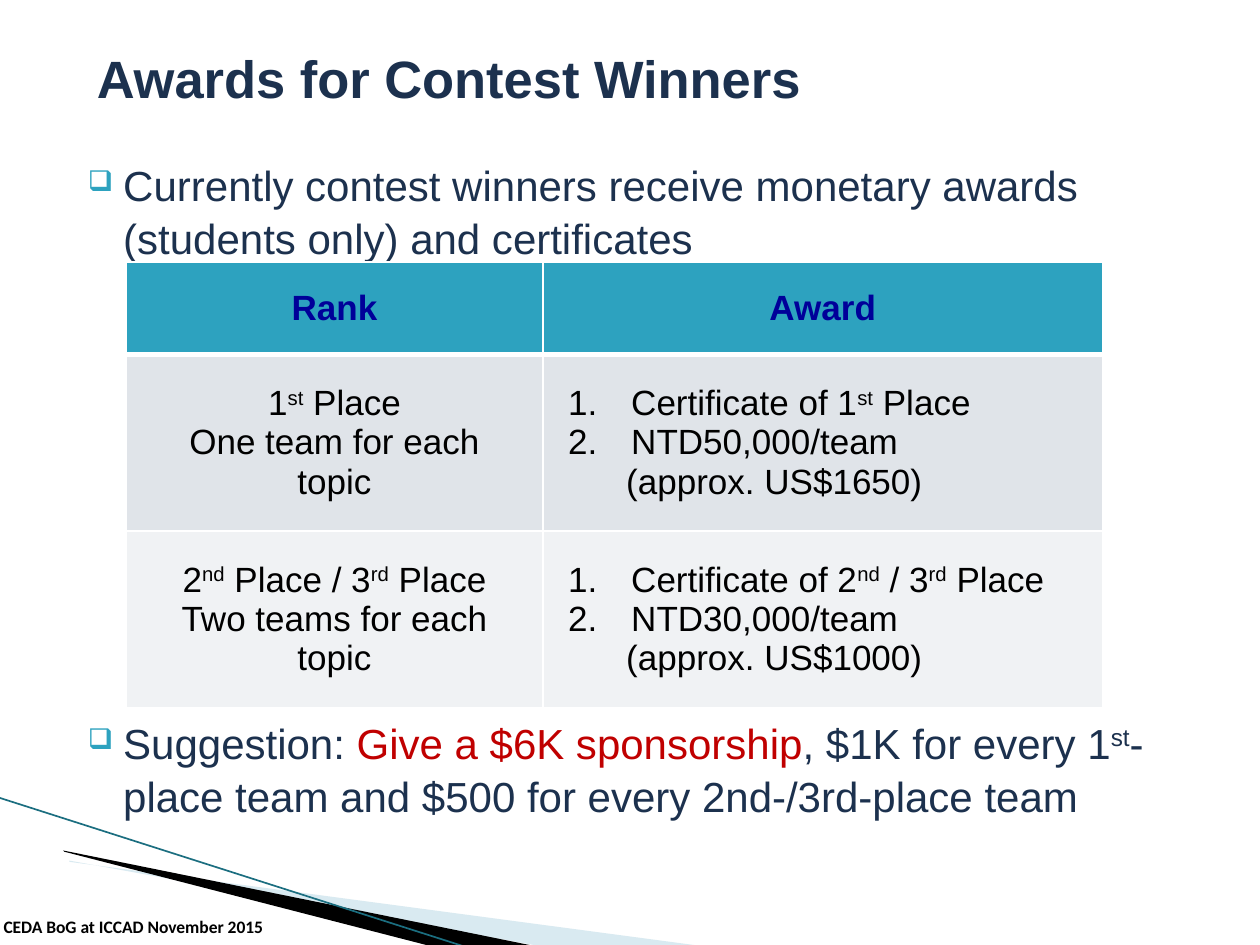
from dataclasses import dataclass

from lxml import etree
from pptx import Presentation
from pptx.dml.color import RGBColor
from pptx.enum.shapes import MSO_CONNECTOR
from pptx.enum.text import MSO_ANCHOR, PP_ALIGN
from pptx.oxml.ns import qn
from pptx.util import Inches, Pt

LEFT, MID = PP_ALIGN.LEFT, PP_ALIGN.CENTER
TOP, CORE, BASE = MSO_ANCHOR.TOP, MSO_ANCHOR.MIDDLE, MSO_ANCHOR.BOTTOM
LINE = MSO_CONNECTOR.STRAIGHT


@dataclass(frozen=True)
class Theme:
    face: str = "Arial"
    small: str = "Calibri"
    navy: str = "1C314E"
    teal: str = "2DA2BF"
    deep: str = "1B6E80"
    pale: str = "A0CBDC"
    blue: str = "000099"
    red: str = "C00000"
    black: str = "000000"
    white: str = "FFFFFF"
    bands: tuple = ("E0E4E9", "F0F2F4")
    title: int = 30
    body: int = 24
    cell: int = 20
    foot: int = 10


THEME = Theme()
ROWS = (
    (("1^st^ Place", "One team for each topic"),
     ("Certificate of 1^st^ Place", "NTD50,000/team", "(approx. US$1650)")),
    (("2^nd^ Place / 3^rd^ Place", "Two teams for each topic"),
     ("Certificate of 2^nd^ / 3^rd^ Place", "NTD30,000/team",
      "(approx. US$1000)")),
)


def rgb(code):
    return RGBColor.from_string(code)


def node(base, tag, **attrs):
    item = etree.SubElement(base, qn(tag))
    for key, val in attrs.items():
        item.set(key, str(val))
    return item


def write(para, text, size=THEME.cell, color=THEME.black, bold=False,
          face=THEME.face, align=LEFT):
    para.alignment = align
    for spot, part in enumerate(text.split("^")):
        if not part:
            continue
        run = para.add_run()
        run.text = part
        font = run.font
        font.size, font.name, font.bold = Pt(size), face, bold
        font.color.rgb = rgb(color)
        if spot % 2:
            run._r.get_or_add_rPr().set("baseline", "30000")


def indent(para, left, hang=0):
    props = para._p.get_or_add_pPr()
    props.set("marL", str(Inches(left)))
    props.set("indent", str(Inches(-hang)))
    return props


def bullet(para):
    props = indent(para, 0.4, 0.28)
    node(node(props, "a:buClr"), "a:srgbClr", val=THEME.teal)
    node(props, "a:buSzPct", val=68000)
    node(props, "a:buChar", char="❑")
    para.line_spacing = 1.06


def number(para):
    props = indent(para, 0.5, 0.5)
    node(props, "a:buFont", typeface=THEME.face)
    node(props, "a:buAutoNum", type="arabicPeriod")


def box(slide, left, top, width, height, anchor):
    shape = slide.shapes.add_textbox(
        Inches(left), Inches(top), Inches(width), Inches(height))
    frame = shape.text_frame
    frame.word_wrap = True
    frame.vertical_anchor = anchor
    return frame


def wedge(slide, points, color, alpha=100):
    spots = [(Inches(x), Inches(y)) for x, y in points]
    build = slide.shapes.build_freeform(*spots[0])
    build.add_line_segments(spots[1:])
    shape = build.convert_to_shape()
    shape.shadow.inherit = False
    shape.line.fill.background()
    shape.fill.solid()
    shape.fill.fore_color.rgb = rgb(color)
    if alpha < 100:
        tint = shape.fill._xPr.find(".//" + qn("a:srgbClr"))
        node(tint, "a:alpha", val=alpha * 1000)


def stroke(slide, start, end):
    line = slide.shapes.add_connector(LINE, *map(Inches, start + end))
    line.line.color.rgb = rgb(THEME.deep)
    line.line.width = Pt(0.95)
    node(line._element.spPr, "a:effectLst")


def style(cell, fill, top=1, base=1):
    cell.vertical_anchor = CORE
    cell.margin_left = cell.margin_right = Inches(0.2)
    cell.margin_top = cell.margin_bottom = Inches(0.2)
    props = cell._tc.get_or_add_tcPr()
    for side, width in (("L", 1), ("R", 1), ("T", top), ("B", base)):
        edge = node(props, "a:ln" + side, w=Pt(width))
        node(node(edge, "a:solidFill"), "a:srgbClr", val=THEME.white)
    cell.fill.solid()
    cell.fill.fore_color.rgb = rgb(fill)


def lines(cell, texts):
    frame = cell.text_frame
    for spot, text in enumerate(texts):
        yield frame.add_paragraph() if spot else frame.paragraphs[0], text


def awards(slide):
    widths, heights = (3.31, 4.44), (0.73, 1.4, 1.4)
    table = slide.shapes.add_table(
        3, 2, Inches(1), Inches(2.08),
        Inches(sum(widths)), Inches(sum(heights))).table
    for col, width in zip(table.columns, widths):
        col.width = Inches(width)
    for row, height in zip(table.rows, heights):
        row.height = Inches(height)
    for col, text in enumerate(("Rank", "Award")):
        cell = table.cell(0, col)
        style(cell, THEME.teal, base=3)
        write(cell.text_frame.paragraphs[0], text, color=THEME.blue,
              bold=True, align=MID)
    for row, (rank, prize) in enumerate(ROWS, 1):
        left, right = table.cell(row, 0), table.cell(row, 1)
        for cell in (left, right):
            style(cell, THEME.bands[row - 1], top=3 if row == 1 else 1)
        for para, text in lines(left, rank):
            write(para, text, align=MID)
        for para, text in lines(right, prize):
            if text.startswith("("):
                indent(para, 0.46)
            else:
                number(para)
            write(para, text)


def points(slide):
    frame = box(slide, 0.48, 1.19, 8.96, 5.63, TOP)
    first, last = frame.paragraphs[0], frame.add_paragraph()
    for para in (first, last):
        bullet(para)
    last.space_before = Pt(258)
    look = {"size": THEME.body, "color": THEME.navy}
    write(first, "Currently contest winners receive monetary awards "
          "(students only) and certificates", **look)
    write(last, "Suggestion: ", **look)
    write(last, "Give a $6K sponsorship", size=THEME.body, color=THEME.red)
    write(last, ", $1K for every 1^st^-place team and $500 for every "
          "2nd-/3rd-place team", **look)


def main():
    deck = Presentation()
    deck.slide_width, deck.slide_height = Inches(10), Inches(7.5)
    slide = deck.slides.add_slide(deck.slide_layouts[6])
    wedge(slide, ((0.55, 6.84), (5.58, 7.51), (4.29, 7.51), (0.55, 6.83)),
          THEME.pale, 40)
    wedge(slide, ((0.5, 6.75), (4.25, 7.51), (3.46, 7.52), (0.51, 6.76)),
          THEME.black)
    stroke(slide, (-0.01, 6.33), (3.71, 7.52))
    title = box(slide, 0.67, 0.24, 8.6, 0.75, CORE)
    write(title.paragraphs[0], "Awards for Contest Winners",
          size=THEME.title, color=THEME.navy, bold=True)
    points(slide)
    awards(slide)
    foot = box(slide, -0.07, 7.25, 2.57, 0.24, BASE)
    write(foot.paragraphs[0], "CEDA BoG at ICCAD November 2015",
          size=THEME.foot, bold=True, face=THEME.small)
    deck.save("out.pptx")


if __name__ == "__main__":
    main()
